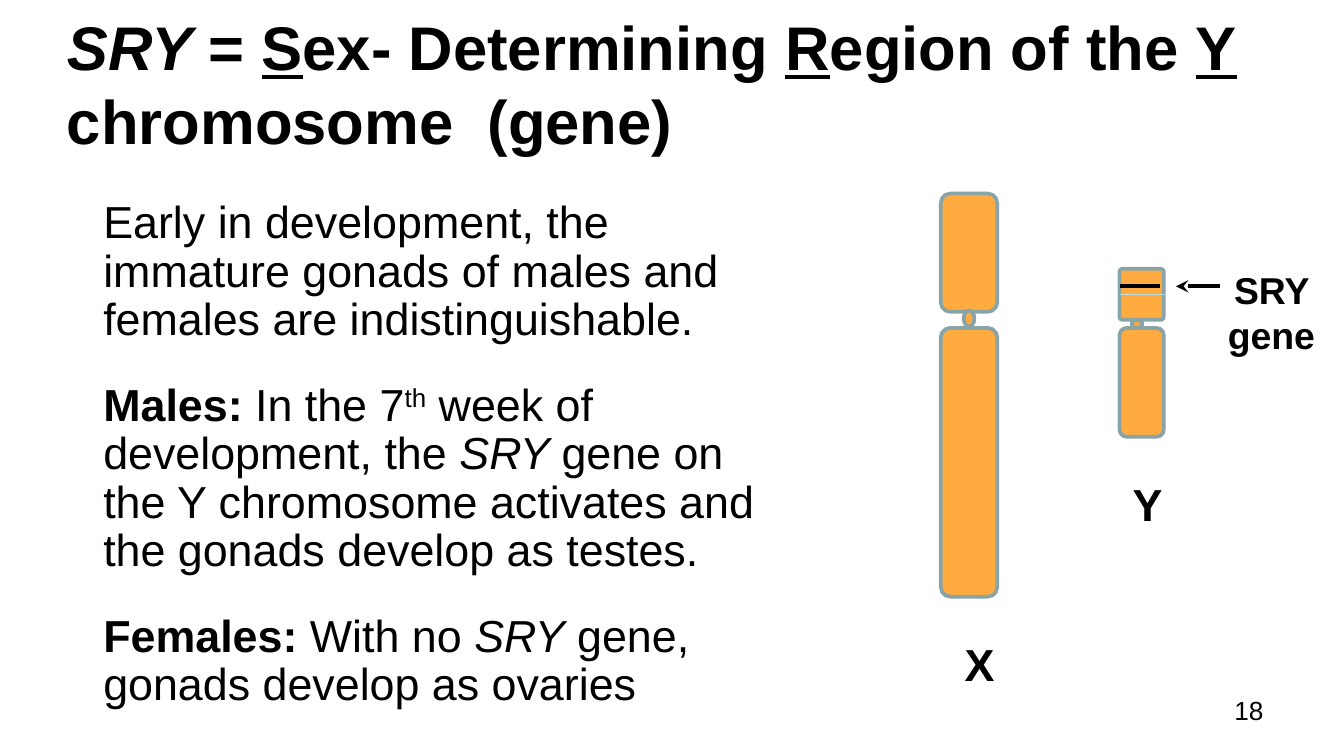
from dataclasses import dataclass

from lxml import etree
from pptx import Presentation
from pptx.dml.color import RGBColor
from pptx.enum.shapes import MSO_CONNECTOR, MSO_SHAPE
from pptx.enum.text import MSO_ANCHOR, PP_ALIGN
from pptx.oxml.ns import qn
from pptx.util import Inches, Pt

ROUNDED, OVAL = MSO_SHAPE.ROUNDED_RECTANGLE, MSO_SHAPE.OVAL
STRAIGHT = MSO_CONNECTOR.STRAIGHT
LEFT, CENTER, RIGHT = PP_ALIGN.LEFT, PP_ALIGN.CENTER, PP_ALIGN.RIGHT
TOP, MIDDLE = MSO_ANCHOR.TOP, MSO_ANCHOR.MIDDLE

SLIDE_WIDTH = Inches(10)
SLIDE_HEIGHT = SLIDE_WIDTH * 9 // 16
GENE_Y = 2.13

BLACK = RGBColor(0x00, 0x00, 0x00)
ORANGE = RGBColor(0xFF, 0xAB, 0x40)
GRAY_TEAL = RGBColor(0x89, 0xA4, 0xA7)
PALE_TEAL = RGBColor(0xB6, 0xDC, 0xDF)
FONT = "Arial"


@dataclass(frozen=True)
class Span:
    text: str
    bold: bool = False
    italic: bool = False
    underline: bool = False
    superscript: bool = False


@dataclass(frozen=True)
class TextBlock:
    left: float
    top: float
    width: float
    height: float
    size: float
    paragraphs: list[list[Span]]
    align: PP_ALIGN = LEFT
    anchor: MSO_ANCHOR = TOP
    line_spacing: float = 1.0
    gap: float = 0


@dataclass(frozen=True)
class ChromosomePart:
    left: float
    top: float
    width: float
    height: float
    corner: float | None = 0.167  # None marks a centromere


@dataclass(frozen=True)
class Stroke:
    start: tuple[float, float]
    end: tuple[float, float]
    color: RGBColor
    width: float
    arrow: bool = False


TEXTS = [
    TextBlock(7.17, 5.12, 2.33, 0.39, 14, [[Span("18")]], align=RIGHT),
    TextBlock(0.4, 0.19, 9.38, 0.85, 33, [[
        Span("SRY ", bold=True, italic=True),
        Span("= ", bold=True),
        Span("S", bold=True, underline=True),
        Span("ex- Determining ", bold=True),
        Span("R", bold=True, underline=True),
        Span("egion of the ", bold=True),
        Span("Y", bold=True, underline=True),
        Span(" chromosome  (gene)", bold=True),
    ]], anchor=MIDDLE),
    TextBlock(0.67, 1.44, 5.25, 3.36, 24, [
        [Span("Early in development, the immature gonads of males and "
              "females are indistinguishable.")],
        [Span("Males: ", bold=True),
         Span("In the 7"),
         Span("th", superscript=True),
         Span(" week of development, the "),
         Span("SRY ", italic=True),
         Span("gene on the Y chromosome activates and the gonads develop as testes.")],
        [Span("Females: ", bold=True),
         Span("With no "),
         Span("SRY", italic=True),
         Span(" gene, gonads develop as ovaries")],
    ], line_spacing=0.9, gap=20),
    TextBlock(8.92, 1.94, 1.08, 0.58, 20, [[Span("SRY gene", bold=True)]], align=CENTER),
    TextBlock(7.08, 4.69, 0.43, 0.38, 24, [[Span("X", bold=True)]]),
    TextBlock(8.33, 3.5, 0.43, 0.38, 24, [[Span("Y", bold=True)]]),
]

CHROMOSOME_PARTS = [
    ChromosomePart(7, 1.44, 0.42, 0.88),
    ChromosomePart(8.33, 2, 0.33, 0.38, corner=0.07),
    ChromosomePart(7, 2.44, 0.42, 2),
    ChromosomePart(8.33, 2.44, 0.33, 0.81),
    ChromosomePart(7.17, 2.31, 0.08, 0.12, corner=None),
    ChromosomePart(8.42, 2.38, 0.08, 0.06, corner=None),
]

STROKES = [
    Stroke((8.33, 2.19), (8.67, 2.19), PALE_TEAL, 0.75),
    Stroke((8.33, GENE_Y), (8.63, GENE_Y), BLACK, 2.25),
    Stroke((9.08, GENE_Y), (8.75, GENE_Y), BLACK, 2.25, arrow=True),
]


def add_text(slide, block: TextBlock) -> None:
    box = slide.shapes.add_textbox(Inches(block.left), Inches(block.top),
                                   Inches(block.width), Inches(block.height))
    frame = box.text_frame
    frame.word_wrap = True
    frame.vertical_anchor = block.anchor
    for index, spans in enumerate(block.paragraphs):
        paragraph = frame.add_paragraph() if index else frame.paragraphs[0]
        paragraph.alignment = block.align
        paragraph.line_spacing = block.line_spacing
        paragraph.space_before = Pt(block.gap if index else 0)
        for span in spans:
            run = paragraph.add_run()
            run.text = span.text
            font = run.font
            font.name, font.size = FONT, Pt(block.size)
            font.color.rgb = BLACK
            font.bold, font.italic = span.bold, span.italic
            font.underline = span.underline
            if span.superscript:
                run._r.get_or_add_rPr().set("baseline", "30000")


def add_chromosome_part(slide, part: ChromosomePart) -> None:
    kind = OVAL if part.corner is None else ROUNDED
    shape = slide.shapes.add_shape(kind, Inches(part.left), Inches(part.top),
                                   Inches(part.width), Inches(part.height))
    if part.corner is not None:
        shape.adjustments[0] = part.corner
    shape.shadow.inherit = False
    shape.fill.solid()
    shape.fill.fore_color.rgb = ORANGE
    shape.line.color.rgb = GRAY_TEAL
    shape.line.width = Pt(2)


def add_stroke(slide, stroke: Stroke) -> None:
    connector = slide.shapes.add_connector(
        STRAIGHT, *map(Inches, stroke.start), *map(Inches, stroke.end))
    connector.line.color.rgb = stroke.color
    connector.line.width = Pt(stroke.width)
    properties = connector._element.spPr
    if stroke.arrow:
        outline = properties.find(qn("a:ln"))
        etree.SubElement(outline, qn("a:tailEnd"), type="stealth")
    etree.SubElement(properties, qn("a:effectLst"))


def main() -> None:
    presentation = Presentation()
    presentation.slide_width = SLIDE_WIDTH
    presentation.slide_height = SLIDE_HEIGHT
    slide = presentation.slides.add_slide(presentation.slide_layouts[6])
    for part in CHROMOSOME_PARTS:
        add_chromosome_part(slide, part)
    for stroke in STROKES:
        add_stroke(slide, stroke)
    for block in TEXTS:
        add_text(slide, block)
    presentation.save("out.pptx")


if __name__ == "__main__":
    main()
